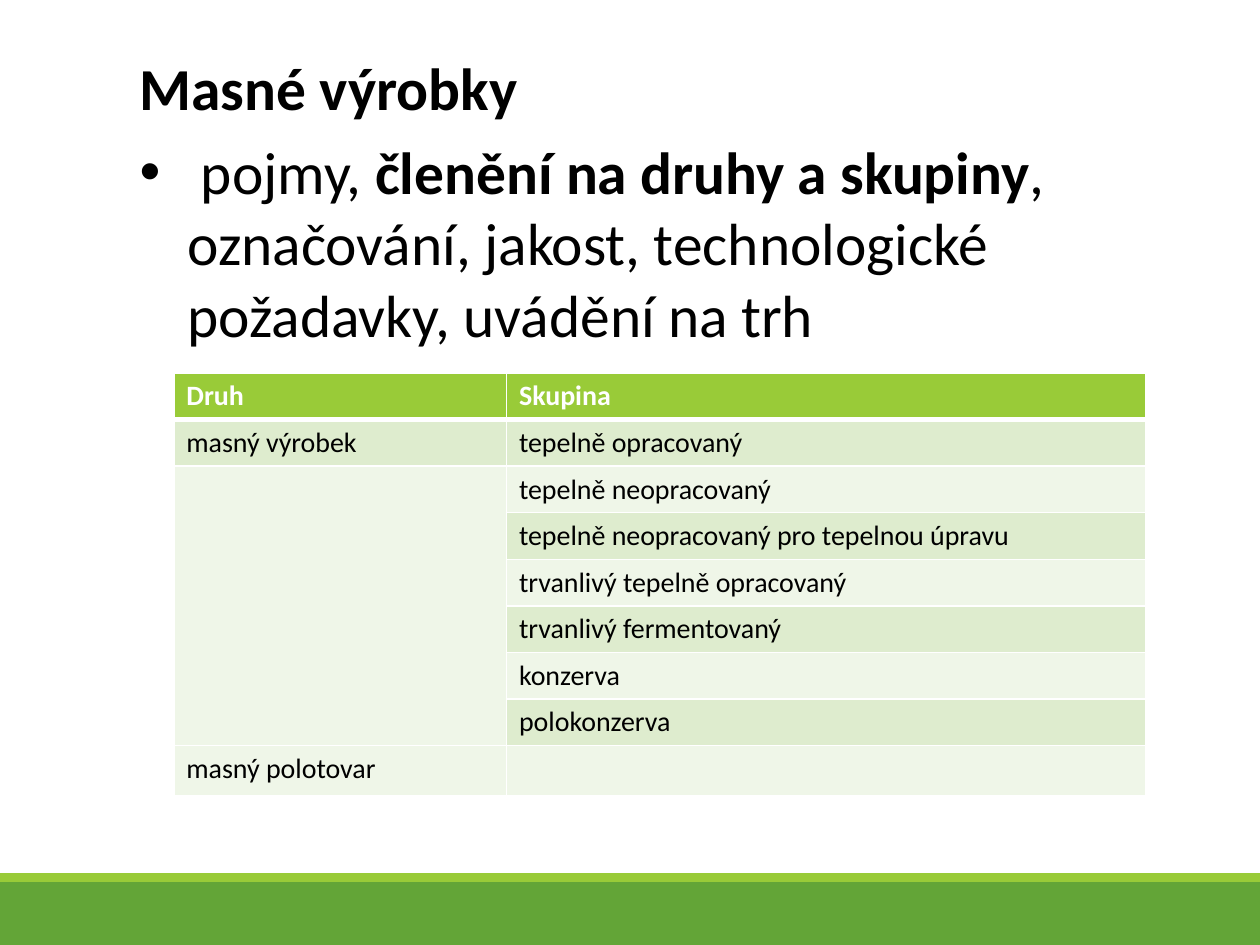
from lxml import etree
from pptx import Presentation
from pptx.dml.color import RGBColor
from pptx.enum.shapes import MSO_SHAPE
from pptx.oxml.ns import qn
from pptx.util import Inches, Pt

RECT = MSO_SHAPE.RECTANGLE
BLACK = RGBColor(0x00, 0x00, 0x00)
WHITE = RGBColor(0xFF, 0xFF, 0xFF)
GREEN = RGBColor(0x63, 0xA5, 0x37)
LIME = RGBColor(0x99, 0xCB, 0x38)
PALE = RGBColor(0xDE, 0xEC, 0xCE)
PALEST = RGBColor(0xEF, 0xF6, 0xE8)


def add_run(p, text, size=34, bold=False, color=BLACK):
    r = p.add_run()
    r.text = text
    r.font.name = "Calibri"
    r.font.size = Pt(size)
    r.font.bold = bold
    r.font.color.rgb = color


def set_borders(cell, bottom):
    """Draw white borders, 1 pt except for the bottom one."""
    tcPr = cell._tc.get_or_add_tcPr()
    for i, (side, width) in enumerate(
            [("lnL", 1), ("lnR", 1), ("lnT", 1), ("lnB", bottom)]):
        ln = etree.Element(qn("a:" + side), w=str(Pt(width)))
        fill = etree.SubElement(ln, qn("a:solidFill"))
        etree.SubElement(fill, qn("a:srgbClr"), val=str(WHITE))
        tcPr.insert(i, ln)


prs = Presentation()
prs.slide_width, prs.slide_height = Inches(10), Inches(7.5)
s = prs.slides.add_slide(prs.slide_layouts[6])

# Footer bands
for top, height, color in [(7, 0.5, GREEN), (6.93, 0.07, LIME)]:
    sp = s.shapes.add_shape(RECT, 0, Inches(top), prs.slide_width, Inches(height))
    sp.shadow.inherit = False
    sp.fill.solid()
    sp.fill.fore_color.rgb = color
    sp.line.fill.background()

# Heading and bullet
tf = s.shapes.add_textbox(Inches(1.01), Inches(0.36), Inches(8.99), Inches(2.76)).text_frame
tf.word_wrap = True
add_run(tf.paragraphs[0], "Masné výrobky", bold=True)

p = tf.add_paragraph()
pPr = p._p.get_or_add_pPr()
pPr.set("marL", str(Inches(0.38)))
pPr.set("indent", str(Inches(-0.38)))
etree.SubElement(pPr, qn("a:buFont"), typeface="Arial")
etree.SubElement(pPr, qn("a:buChar"), char="•")
p.space_before = Pt(7)
add_run(p, " pojmy, ")
add_run(p, "členění na druhy a skupiny", bold=True)
add_run(p, ", označování, jakost, technologické požadavky, uvádění na trh")

# Table of kinds and groups
rows = [
    ("Druh", "Skupina"),
    ("masný výrobek", "tepelně opracovaný"),
    ("", "tepelně neopracovaný"),
    ("", "tepelně neopracovaný pro tepelnou úpravu"),
    ("", "trvanlivý tepelně opracovaný"),
    ("", "trvanlivý fermentovaný"),
    ("", "konzerva"),
    ("", "polokonzerva"),
    ("masný polotovar", ""),
]
widths = [2.64, 5.07]
row_height = 0.37
table = s.shapes.add_table(len(rows), len(widths), Inches(1.38), Inches(2.96),
                           Inches(sum(widths)), Inches(row_height * len(rows))).table
for col, width in zip(table.columns, widths):
    col.width = Inches(width)

for i, row in enumerate(rows):
    table.rows[i].height = Inches(row_height)
    header = i == 0
    for j, text in enumerate(row):
        cell = table.cell(i, j)
        add_run(cell.text_frame.paragraphs[0], text, size=16, bold=header,
                color=WHITE if header else BLACK)
        cell.fill.solid()
        cell.fill.fore_color.rgb = LIME if header else PALE if i % 2 else PALEST
        set_borders(cell, bottom=3 if header else 1)
table.cell(2, 0).merge(table.cell(7, 0))

prs.save("out.pptx")
